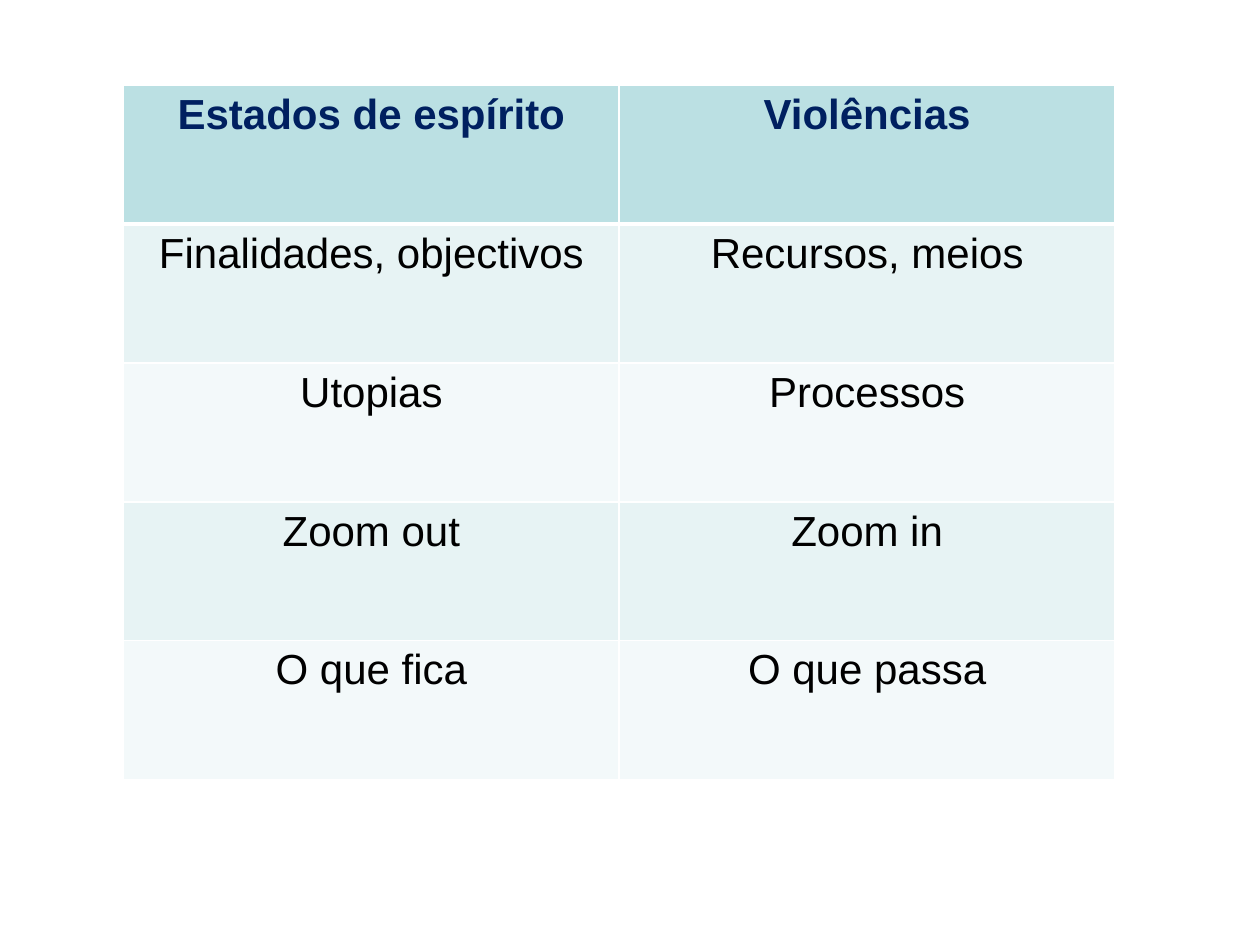
from lxml.etree import SubElement
from pptx import Presentation
from pptx.dml.color import RGBColor
from pptx.enum.text import PP_ALIGN
from pptx.oxml.ns import qn
from pptx.util import Inches, Pt

WHITE = RGBColor(0xFF, 0xFF, 0xFF)
BLACK = RGBColor(0x00, 0x00, 0x00)
NAVY = RGBColor(0x00, 0x20, 0x60)
TEAL = RGBColor(0xBB, 0xE0, 0xE3)
BAND_DARK = RGBColor(0xE7, 0xF3, 0xF4)
BAND_LIGHT = RGBColor(0xF3, 0xF9, 0xFA)

ROWS = [
    ("Estados de espírito", "Violências"),
    ("Finalidades, objectivos", "Recursos, meios"),
    ("Utopias", "Processos"),
    ("Zoom out", "Zoom in"),
    ("O que fica", "O que passa"),
]


class SlideBuilder:
    font = "Arial"
    size = Pt(24)
    thin, thick = Pt(1), Pt(3)

    def __init__(self, prs):
        self.width, self.height = prs.slide_width, prs.slide_height
        self.slide = prs.slides.add_slide(prs.slide_layouts[6])

    def table(self, rows, left, top, width, height):
        """Add a banded table; the box is given as shares of the slide."""
        box = (int(left * self.width), int(top * self.height),
               int(width * self.width), int(height * self.height))
        table = self.slide.shapes.add_table(len(rows), len(rows[0]), *box).table
        for i, row in enumerate(rows):
            for j, text in enumerate(row):
                self.cell(table.cell(i, j), text, i)

    def cell(self, cell, text, row):
        # The header is set off by a thick rule below it
        header = row == 0
        self.borders(cell, top=self.thick if row == 1 else self.thin,
                     bottom=self.thick if header else self.thin)
        cell.fill.solid()
        band = BAND_DARK if row % 2 else BAND_LIGHT
        cell.fill.fore_color.rgb = TEAL if header else band

        cell.text = text
        p = cell.text_frame.paragraphs[0]
        p.alignment = PP_ALIGN.CENTER
        p.font.name, p.font.size, p.font.bold = self.font, self.size, header
        p.font.color.rgb = NAVY if header else BLACK

    def borders(self, cell, top, bottom):
        tc_pr = cell._tc.get_or_add_tcPr()
        sides = {"L": self.thin, "R": self.thin, "T": top, "B": bottom}
        for side, weight in sides.items():
            ln = SubElement(tc_pr, qn(f"a:ln{side}"), w=str(weight))
            fill = SubElement(ln, qn("a:solidFill"))
            SubElement(fill, qn("a:srgbClr"), val=str(WHITE))


def main():
    prs = Presentation()
    prs.slide_width, prs.slide_height = Inches(10), Inches(7.5)

    # Comparison table
    s = SlideBuilder(prs)
    s.table(ROWS, left=0.098, top=0.09, width=0.787, height=0.735)

    prs.save("out.pptx")


if __name__ == "__main__":
    main()
